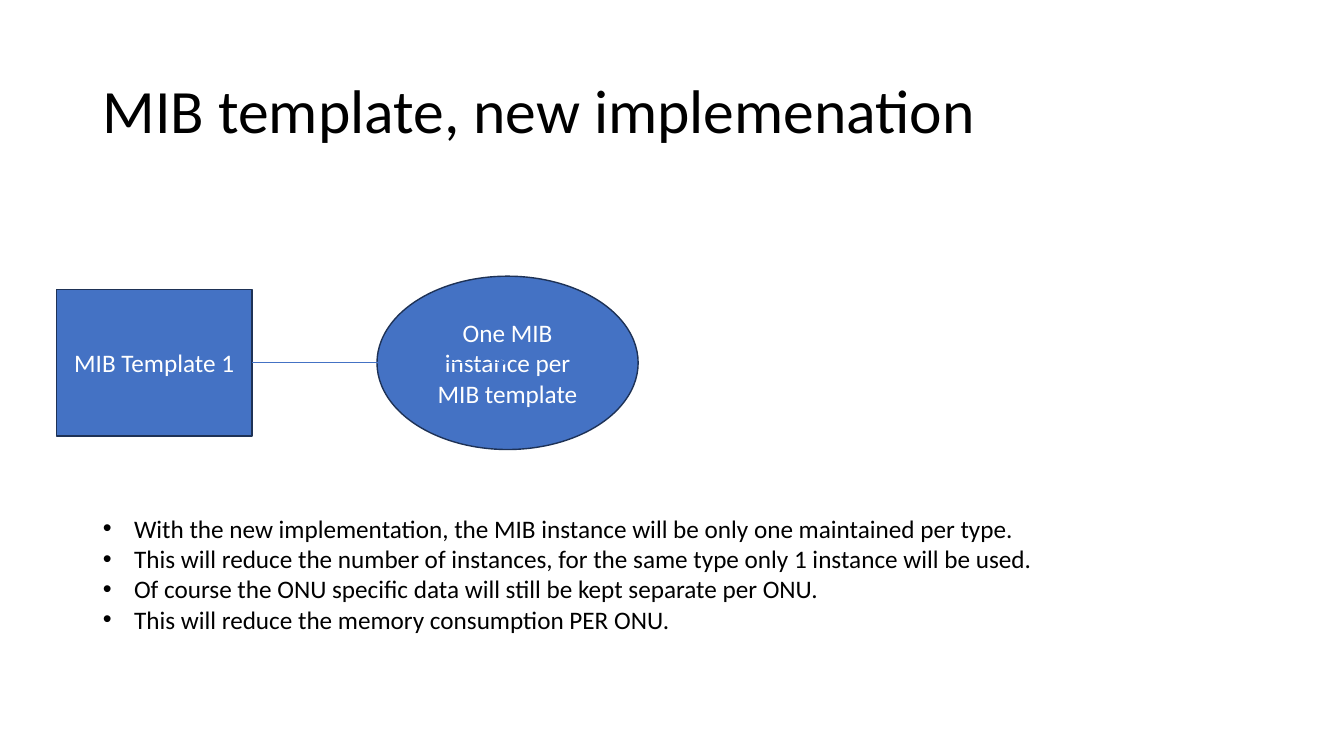
from lxml import etree
from pptx import Presentation
from pptx import util as u
from pptx.dml.color import RGBColor
from pptx.enum import shapes, text
from pptx.oxml import ns

BLUE, NAVY, WHITE, BLACK = "4472C4", "1E3256", "FFFFFF", "000000"


def paint(color_format, hex_color):
    color_format.rgb = RGBColor.from_string(hex_color)


def write(paragraph, words, size, color, align):
    paragraph.alignment = align
    run = paragraph.add_run()
    run.text = words
    run.font.name = "Calibri"
    run.font.size = u.Pt(size)
    paint(run.font.color, color)


deck = Presentation()
deck.slide_width, deck.slide_height = u.Inches(13.33), u.Inches(7.5)
slide = deck.slides.add_slide(deck.slide_layouts[1])

# Grid of 100 columns by 100 rows
COL, ROW = deck.slide_width / 100, deck.slide_height / 100
MARGIN = 6.9
AXIS = 48  # row on which the diagram is centred

# Title
title = slide.shapes.title
title.left, title.top = int(MARGIN * COL), int(5.33 * ROW)
title.width, title.height = int(86.25 * COL), int(19.33 * ROW)
title.text_frame.vertical_anchor = text.MSO_ANCHOR.MIDDLE
heading = title.text_frame.paragraphs[0]
heading.line_spacing = 0.9
write(heading, "MIB template, new implemenation", 44, BLACK, text.PP_ALIGN.LEFT)

# Template and its single instance: kind, words, left, width, height
nodes = []
for kind, words, left, width, height in [
    (shapes.MSO_SHAPE.RECTANGLE, "MIB Template 1", 4.2, 14.55, 19.33),
    (shapes.MSO_SHAPE.OVAL, "One MIB instance per MIB template", 28.05, 19.43, 22.93),
]:
    node = slide.shapes.add_shape(
        kind, int(left * COL), int((AXIS - height / 2) * ROW),
        int(width * COL), int(height * ROW))
    node.shadow.inherit = False
    node.fill.solid()
    paint(node.fill.fore_color, BLUE)
    paint(node.line.color, NAVY)
    node.line.width = u.Pt(1)
    node.text_frame.word_wrap = True
    node.text_frame.vertical_anchor = text.MSO_ANCHOR.MIDDLE
    write(node.text_frame.paragraphs[0], words, 18, WHITE, text.PP_ALIGN.CENTER)
    nodes.append(node)
template, instance = nodes

# Arrow from the template to the instance
arrow = slide.shapes.add_connector(shapes.MSO_CONNECTOR.STRAIGHT, 0, 0, 0, 0)
arrow.begin_connect(template, 3)
arrow.end_connect(instance, 2)  # left point of the oval's eight
arrow.end_y = arrow.begin_y
paint(arrow.line.color, BLUE)
arrow.line.width = u.Pt(0.5)
etree.SubElement(arrow.line._get_or_add_ln(), ns.qn("a:tailEnd"), type="triangle")
etree.SubElement(arrow._element.spPr, ns.qn("a:effectLst"))

# Benefits of the new implementation
benefits = slide.placeholders[1]
benefits.left, benefits.top = int(MARGIN * COL), int(67.2 * ROW)
benefits.width, benefits.height = int(83.65 * COL), int(17.47 * ROW)
benefits.text_frame.auto_size = text.MSO_AUTO_SIZE.SHAPE_TO_FIT_TEXT
for number, benefit in enumerate([
    "With the new implementation, the MIB instance will be only one maintained per type.",
    "This will reduce the number of instances, for the same type only 1 instance will be used.",
    "Of course the ONU specific data will still be kept separate per ONU.",
    "This will reduce the memory consumption PER ONU.",
]):
    frame = benefits.text_frame
    item = frame.add_paragraph() if number else frame.paragraphs[0]
    item.space_before = u.Pt(0)
    write(item, benefit, 18, BLACK, text.PP_ALIGN.LEFT)
    properties = item._p.get_or_add_pPr()
    properties.set("marL", str(u.Inches(0.31)))
    properties.set("indent", str(-u.Inches(0.31)))

deck.save("out.pptx")
